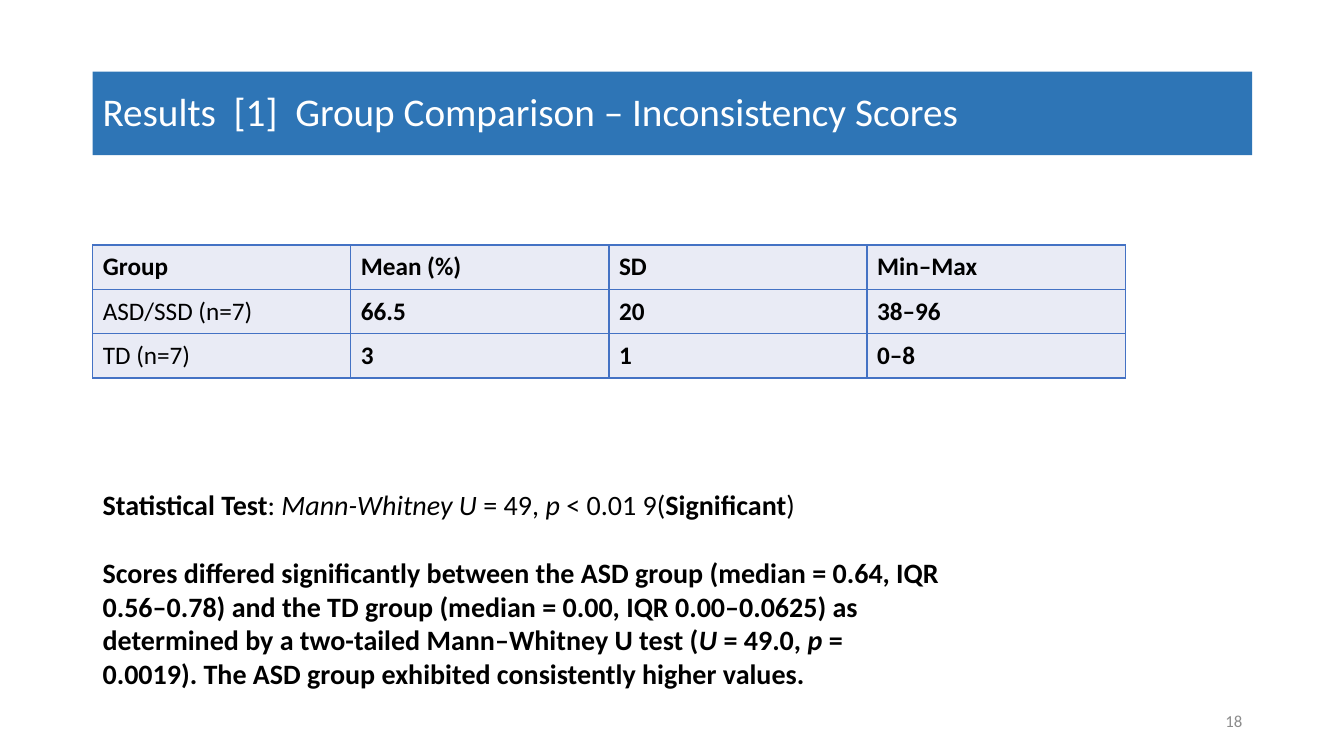
from pptx import Presentation
from pptx.dml.color import RGBColor
from pptx.enum.shapes import MSO_SHAPE as Shape
from pptx.enum.text import MSO_ANCHOR as Anchor, PP_ALIGN as Align
from pptx.oxml import parse_xml
from pptx.oxml.ns import nsdecls
from pptx.util import Inches, Pt

# Content
TITLE = "Results  [1]  Group Comparison – Inconsistency Scores"
PAGE_NUMBER = "18"
SCORES = [
    ["Group", "Mean (%)", "SD", "Min–Max"],
    ["ASD/SSD (n=7)", "66.5", "20", "38–96"],
    ["TD (n=7)", "3", "1", "0–8"],
]
BOLD, ITALIC = {"bold": True}, {"italic": True}
BOLD_ITALIC = BOLD | ITALIC
FINDINGS = [
    [("Statistical Test", BOLD), (": ", {}), ("Mann-Whitney U", ITALIC),
     (" = 49, ", {}), ("p", ITALIC), (" < 0.01 9(", {}),
     ("Significant", BOLD), (")", {})],
    [("Scores differed significantly between the ASD group (median = 0.64, "
      "IQR 0.56–0.78) and the TD group (median = 0.00, IQR 0.00–0.0625) as "
      "determined by a two-tailed Mann–Whitney U test (", BOLD),
     ("U", BOLD_ITALIC), (" = 49.0, ", BOLD), ("p", BOLD_ITALIC),
     (" = 0.0019). The ASD group exhibited consistently higher values.", BOLD)],
]

THEME = {
    "font": "Calibri",
    "colors": {"text": "000000", "title": "FFFFFF", "banner": "2E75B6",
               "cell": "E9EBF5", "border": "4472C4", "number": "8C8C8C"},
    "sizes": {"title": 28, "table": 18, "body": 20, "number": 12},
}
LEFT = 0.92
COLUMN_WIDTH, ROW_HEIGHT = 2.56, 0.44
PARAGRAPH_GAP = Pt(24.4)


def color(name):
    return RGBColor.from_string(THEME["colors"][name])


def add_run(paragraph, text, size, ink="text", **formats):
    run = paragraph.add_run()
    run.text = text
    run.font.color.rgb = color(ink)
    values = {"name": THEME["font"], "size": Pt(THEME["sizes"][size]),
              "bold": False, "italic": False} | formats
    for name, value in values.items():
        setattr(run.font, name, value)


def add_text_box(slide, *box):
    frame = slide.shapes.add_textbox(*map(Inches, box)).text_frame
    frame.word_wrap = True
    return frame


def add_borders(cell):
    properties = cell._tc.get_or_add_tcPr()
    for position, side in enumerate(("lnL", "lnR", "lnT", "lnB")):
        properties.insert(position, parse_xml(
            f'<a:{side} {nsdecls("a")} w="{Pt(1)}"><a:solidFill>'
            f'<a:srgbClr val="{THEME["colors"]["border"]}"/>'
            f'</a:solidFill></a:{side}>'))


def add_title(slide):
    box = map(Inches, (LEFT, 0.71, 11.5, 0.83))
    banner = slide.shapes.add_shape(Shape.RECTANGLE, *box)
    banner.shadow.inherit = False
    banner.fill.solid()
    banner.fill.fore_color.rgb = color("banner")
    banner.line.fill.background()
    frame = banner.text_frame
    frame.word_wrap = True
    frame.vertical_anchor = Anchor.MIDDLE
    paragraph = frame.paragraphs[0]
    paragraph.alignment = Align.LEFT
    paragraph.line_spacing = 0.9
    add_run(paragraph, TITLE, "title", "title")


def add_score_table(slide):
    rows, columns = len(SCORES), len(SCORES[0])
    box = (LEFT, 2.43, columns * COLUMN_WIDTH, rows * ROW_HEIGHT)
    table = slide.shapes.add_table(rows, columns, *map(Inches, box)).table
    for row_index, row in enumerate(SCORES):
        for column_index, text in enumerate(row):
            cell = table.cell(row_index, column_index)
            cell.fill.solid()
            cell.fill.fore_color.rgb = color("cell")
            cell.vertical_anchor = Anchor.MIDDLE
            add_borders(cell)
            is_group_name = row_index > 0 and column_index == 0
            add_run(cell.text_frame.paragraphs[0], text, "table",
                    bold=not is_group_name)


def add_findings(slide):
    frame = add_text_box(slide, LEFT, 4.79, 8.5, 2.12)
    for index, parts in enumerate(FINDINGS):
        paragraph = frame.add_paragraph() if index else frame.paragraphs[0]
        if index:
            paragraph.space_before = PARAGRAPH_GAP
        for text, formats in parts:
            add_run(paragraph, text, "body", **formats)


def add_page_number(slide):
    frame = add_text_box(slide, 9.42, 6.95, 3, 0.4)
    frame.vertical_anchor = Anchor.MIDDLE
    paragraph = frame.paragraphs[0]
    paragraph.alignment = Align.RIGHT
    add_run(paragraph, PAGE_NUMBER, "number", "number")


def main():
    presentation = Presentation()
    presentation.slide_width = Inches(13.33)
    presentation.slide_height = Inches(7.5)
    slide = presentation.slides.add_slide(presentation.slide_layouts[6])
    for add_part in (add_score_table, add_page_number, add_title, add_findings):
        add_part(slide)
    presentation.save("out.pptx")


if __name__ == "__main__":
    main()
